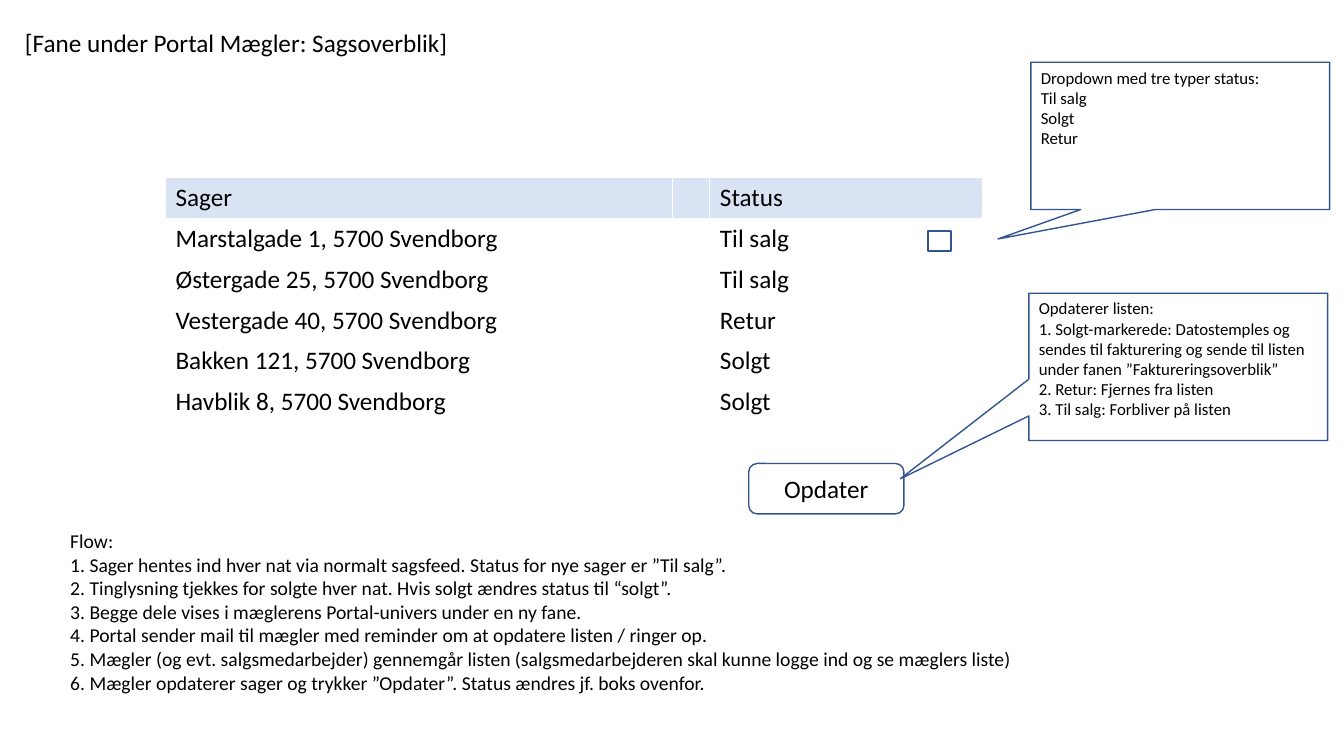
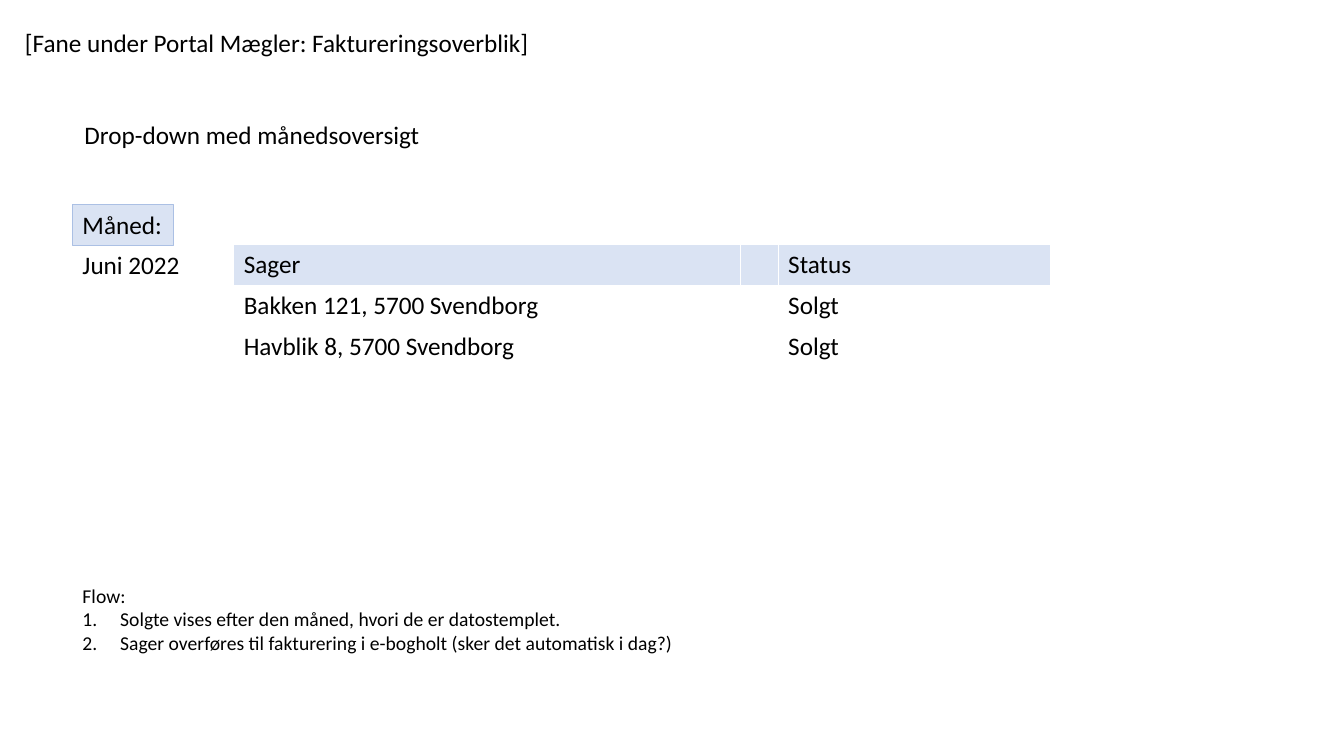
from pptx import Presentation
from pptx.dml.color import RGBColor
from pptx.enum import shapes, text
from pptx.oxml.ns import qn
from pptx.util import Cm, Pt
from lxml import etree

INK, BLUE, PALE, EDGE = "000000", "325491", "DAE3F3", "ABC0E4"
KIND = shapes.MSO_SHAPE


def color(code):
    return RGBColor.from_string(code)


def write(frame, lines, size):
    frame.text = "\n".join(lines)
    frame.word_wrap = True
    for para in frame.paragraphs:
        para.alignment = text.PP_ALIGN.LEFT
        for run in para.runs:
            run.font.size = Pt(size)
            run.font.name = "Calibri"
            run.font.bold = False
            run.font.color.rgb = color(INK)


deck = Presentation()
deck.slide_width, deck.slide_height = Cm(33.87), Cm(19.05)

status = [
    ("Marstalgade 1", "Til salg"),
    ("Østergade 25", "Til salg"),
    ("Vestergade 40", "Retur"),
    ("Bakken 121", "Solgt"),
    ("Havblik 8", "Solgt"),
]
flow = [
    "Flow:",
    "1. Sager hentes ind hver nat via normalt sagsfeed. Status for nye sager er ”Til salg”.",
    "2. Tinglysning tjekkes for solgte hver nat. Hvis solgt ændres status til “solgt”.",
    "3. Begge dele vises i mæglerens Portal-univers under en ny fane.",
    "4. Portal sender mail til mægler med reminder om at opdatere listen / ringer op.",
    "5. Mægler (og evt. salgsmedarbejder) gennemgår listen (salgsmedarbejderen skal kunne logge ind og se mæglers liste)",
    "6. Mægler opdaterer sager og trykker ”Opdater”. Status ændres jf. boks ovenfor.",
]
billing = [
    "Flow:",
    "Solgte vises efter den måned, hvori de er datostemplet.",
    "Sager overføres til fakturering i e-bogholt (sker det automatisk i dag?)",
]
pick = ["Dropdown med tre typer status:", "Til salg", "Solgt", "Retur"]
update = [
    "Opdaterer listen:",
    "1. Solgt-markerede: Datostemples og sendes til fakturering og sende til listen under fanen ”Faktureringsoverblik”",
    "2. Retur: Fjernes fra listen",
    "3. Til salg: Forbliver på listen",
]

pages = [
    ("Sagsoverblik", status, 4.17, 4.47, [(1.52, 13.21, 26, 4.4, flow, 14)], [
        (KIND.RECTANGULAR_CALLOUT, 25.98, 1.57, 7.53, 3.71, pick, 12, (-0.61, 0.7), None, BLUE, 1),
        (KIND.RECTANGLE, 23.39, 5.82, 0.58, 0.51, [], 12, (), None, BLUE, 1),
        (KIND.ROUNDED_RECTANGLE, 18.87, 11.68, 3.91, 1.27, ["Opdater"], 18, (), None, BLUE, 1),
        (KIND.RECTANGULAR_CALLOUT, 25.93, 7.39, 7.53, 3.71, update, 12, (-0.93, 0.76), None, BLUE, 1),
    ]),
    ("Faktureringsoverblik", status[3:], 5.89, 6.17, [
        (1.83, 14.58, 17, 2.64, billing, 14),
        (1.88, 2.87, 10, 1.03, ["Drop-down med månedsoversigt"], 18),
        (1.83, 6.17, 3.6, 1.03, ["Juni 2022"], 18),
    ], [
        (KIND.RECTANGLE, 1.83, 5.16, 2.54, 1.03, ["Måned:"], 18, (), PALE, EDGE, 0.75),
    ]),
]

for name, rows, left, top, notes, marks in pages:
    slide = deck.slides.add_slide(deck.slide_layouts[6])

    head = (0.38, 0.56, 16, 1.03, [f"[Fane under Portal Mægler: {name}]"], 18)
    for x, y, w, h, lines, size in [head] + notes:
        box = slide.shapes.add_textbox(Cm(x), Cm(y), Cm(w), Cm(h))
        write(box.text_frame, lines, size)
        if lines is billing:
            for para in box.text_frame.paragraphs[1:]:
                props = para._p.get_or_add_pPr()
                props.set("marL", str(Cm(0.95)))
                props.set("indent", str(-Cm(0.95)))
                etree.SubElement(props, qn("a:buAutoNum"), type="arabicPeriod")

    table = slide.shapes.add_table(8, 3, Cm(left), Cm(top), Cm(20.58), Cm(8.24)).table
    table.first_row = table.horz_banding = False
    for col, width in zip(table.columns, (12.78, 0.94, 6.86)):
        col.width = Cm(width)
    for cell in table.iter_cells():
        cell.fill.background()
    for cell in table.rows[0].cells:
        cell.fill.solid()
        cell.fill.fore_color.rgb = color(PALE)
    cases = [(f"{road}, 5700 Svendborg", state) for road, state in rows]
    for i, (case, state) in enumerate([("Sager", "Status")] + cases):
        write(table.cell(i, 0).text_frame, [case], 18)
        write(table.cell(i, 2).text_frame, [state], 18)

    for kind, x, y, w, h, lines, size, tip, fill, line, width in marks:
        mark = slide.shapes.add_shape(kind, Cm(x), Cm(y), Cm(w), Cm(h))
        mark.shadow.inherit = False
        for i, value in enumerate(tip):
            mark.adjustments[i] = value
        if fill:
            mark.fill.solid()
            mark.fill.fore_color.rgb = color(fill)
        else:
            mark.fill.background()
        mark.line.color.rgb = color(line)
        mark.line.width = Pt(width)
        frame = mark.text_frame
        write(frame, lines, size)
        frame.vertical_anchor = text.MSO_ANCHOR.TOP
        if kind == KIND.ROUNDED_RECTANGLE:
            frame.vertical_anchor = text.MSO_ANCHOR.MIDDLE
            frame.paragraphs[0].alignment = text.PP_ALIGN.CENTER
        if fill:
            frame.word_wrap = False

deck.save("out.pptx")
